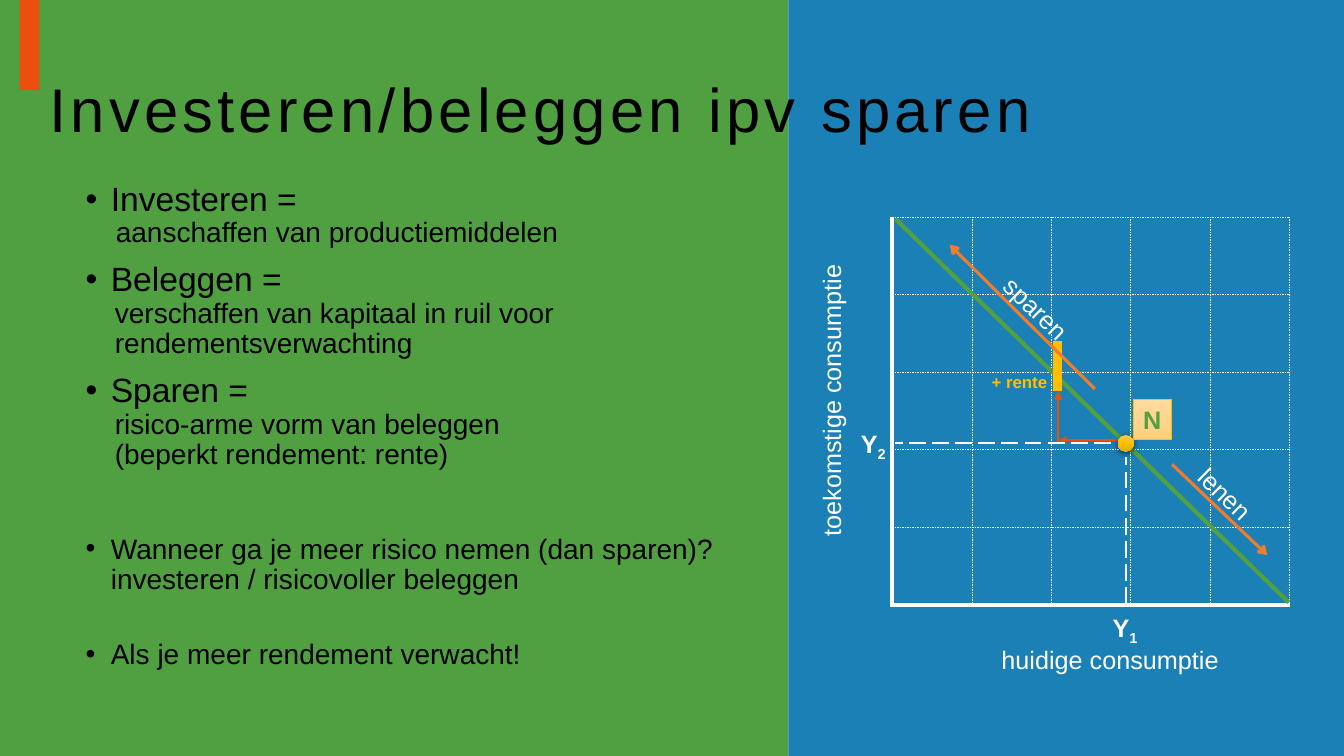
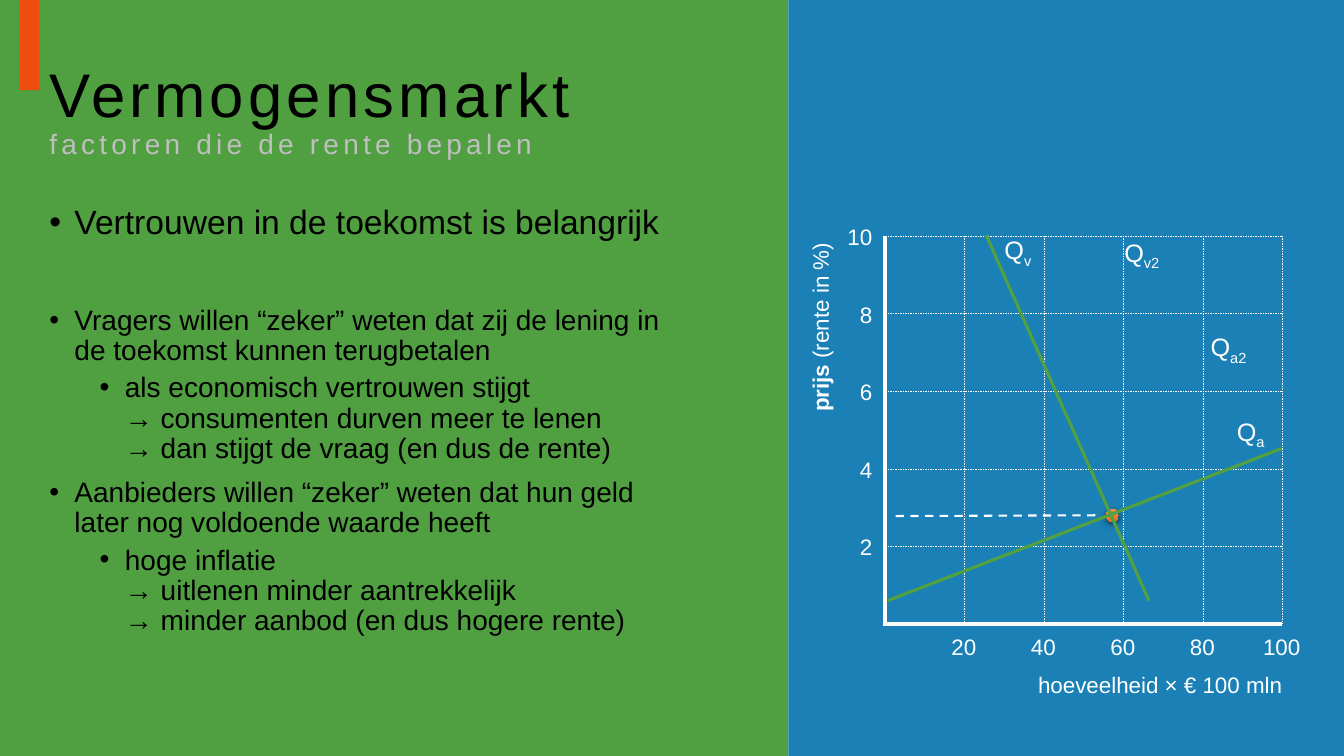
from dataclasses import dataclass
from typing import NamedTuple

from pptx import Presentation
from pptx.dml.color import RGBColor as RGB
from pptx.enum.dml import MSO_LINE as DASH
from pptx.enum.shapes import MSO_CONNECTOR as CONN, MSO_SHAPE as SHAPE
from pptx.enum.text import MSO_ANCHOR as ANCHOR, MSO_AUTO_SIZE as FIT, PP_ALIGN as ALIGN
from pptx.oxml import parse_xml
from pptx.oxml.ns import nsdecls, qn
from pptx.oxml.xmlchemy import OxmlElement
from pptx.util import Inches, Pt

W, H = 13.33, 7.5
COL, ROW, CELLS = 3.94 / 5, 0.77, 5  # one cell of a plot, in inches
COLOURS = {
    "leaf": "258812", "blue": "1A80B6", "red": "ED4D0F", "black": "000000",
    "grey": "BFBFBF", "white": "FFFFFF", "green": "51A041",
    "gold": "FFC000", "orange": "ED7D31",
}
GOLD_FADE = ("FFC64B", "FFC000", "E3AB00")
PALE_FADE = ("FFDB9E", "FFD590", "FFD07C")
ORANGE_FADE = ("F18C57", "F67B28", "E56C19")


class Area(NamedTuple):
    """A rectangle in percent of the slide's size."""
    left: float
    top: float
    width: float
    height: float

    def inches(self) -> list:
        return [Inches(v * side / 100) for v, side in zip(self, (W, H, W, H))]


class Run(NamedTuple):
    text: str
    bold: bool = False
    sub: bool = False


class Item(NamedTuple):
    """A body paragraph; indent is in inches, before in points."""
    text: str
    size: int = 20
    before: float = 10
    indent: float = 0.25
    bullet: bool = True


# Positions of marks are columns and rows from a plot's top left corner.
@dataclass
class Line:
    col1: float
    row1: float
    col2: float
    row2: float
    colour: str = "white"
    width: float = 1.5
    dash: DASH | None = None
    tail: str = ""


@dataclass
class Label:
    runs: tuple[Run, ...]
    col: float
    row: float
    cols: float
    size: int = 18
    colour: str = "white"
    turn: float = 0


@dataclass
class Marker:
    shape: SHAPE
    col: float
    row: float
    cols: float
    rows: float
    fade: tuple[str, str, str]
    outline: str = ""
    text: str = ""


@dataclass
class Plot:
    left: float
    top: float
    marks: list

    def x(self, col: float) -> int:
        return Inches(self.left + col * COL)

    def y(self, row: float) -> int:
        return Inches(self.top + row * ROW)


def rgb(name: str) -> RGB:
    return RGB.from_string(COLOURS[name])


def add_run(p, text: str, size: float, colour: str, bold: bool = False, **attrs: str) -> None:
    r = p.add_run()
    r.text = text
    set_format(r.font, {"name": "Arial", "size": Pt(size), "bold": bold})
    r.font.color.rgb = rgb(colour)
    for name, value in attrs.items():
        r.font._element.set(name, value)


def set_format(target, formats: dict) -> None:
    for name, value in formats.items():
        setattr(target, name, value)


def draw_bands(s, layout) -> None:
    """Draw the coloured bands and hand them to the layout, behind its title."""
    bands = (("leaf", Area(0, 0, 58.66, 100)), ("blue", Area(58.66, 0, 41.34, 100)),
             ("red", Area(1.46, 0, 1.46, 11.93)))
    for i, (colour, area) in enumerate(bands):
        band = s.shapes.add_shape(SHAPE.RECTANGLE, *area.inches())
        band.shadow.inherit = False
        band.fill.solid()
        band.fill.fore_color.rgb = rgb(colour)
        band.line.fill.background()
        if colour == "leaf":
            alpha = OxmlElement("a:alpha")
            alpha.set("val", "80000")
            band.element.spPr.find(".//" + qn("a:srgbClr")).append(alpha)
        layout.shapes.element.insert(2 + i, band.element)


def set_title(s, title: str, subtitle: str) -> None:
    ph = s.shapes.title
    set_format(ph, dict(zip(("left", "top", "width", "height"),
                            Area(2.93, 5.2, 94.6, 19.33).inches())))
    tf = ph.text_frame
    set_format(tf, {"vertical_anchor": ANCHOR.MIDDLE, "auto_size": FIT.NONE, "word_wrap": True})
    p = tf.paragraphs[0]
    set_format(p, {"alignment": ALIGN.LEFT, "line_spacing": 0.9})
    add_run(p, title, 44, "black", spc="300")
    if subtitle:
        p.add_line_break()
        add_run(p, subtitle, 20, "grey", spc="300")


def add_body(s, area: Area, items: list[Item]) -> None:
    tf = s.shapes.add_textbox(*area.inches()).text_frame
    tf.word_wrap = True
    for i, item in enumerate(items):
        p = tf.add_paragraph() if i else tf.paragraphs[0]
        set_format(p, {"line_spacing": 0.9, "space_before": Pt(item.before if i else 0)})
        pPr = p._p.get_or_add_pPr()
        pPr.set("marL", str(Inches(item.indent)))
        pPr.set("indent", str(Inches(-0.25 if item.bullet else 0)))
        if item.bullet:
            pPr.append(parse_xml(f'<a:buFont {nsdecls("a")} typeface="Arial"/>'))
            pPr.append(parse_xml(f'<a:buChar {nsdecls("a")} char="•"/>'))
        for n, line in enumerate(item.text.split("\n")):
            if n:
                p.add_line_break()
            add_run(p, line, item.size, "black")


def draw_line(s, plot: Plot, mark: Line) -> None:
    line = s.shapes.add_connector(CONN.STRAIGHT, plot.x(mark.col1), plot.y(mark.row1),
                                  plot.x(mark.col2), plot.y(mark.row2))
    line.line.color.rgb = rgb(mark.colour)
    line.line.width = Pt(mark.width)
    if mark.dash:
        line.line.dash_style = mark.dash
    if mark.tail:
        tail = OxmlElement("a:tailEnd")
        tail.set("type", mark.tail)
        line.line._get_or_add_ln().append(tail)
    line.element.spPr.append(OxmlElement("a:effectLst"))


def draw_label(s, plot: Plot, mark: Label) -> None:
    """Centre a one-line text on its grid position."""
    width, height = Inches(mark.cols * COL), Pt(mark.size * 1.2 + 7.2)
    box = s.shapes.add_textbox(plot.x(mark.col) - width // 2,
                               plot.y(mark.row) - height // 2, width, height)
    box.rotation = mark.turn
    tf = box.text_frame
    set_format(tf, {"word_wrap": False, "auto_size": FIT.SHAPE_TO_FIT_TEXT})
    p = tf.paragraphs[0]
    p.alignment = ALIGN.CENTER
    for run in mark.runs:
        attrs = {"baseline": "-25000"} if run.sub else {}
        add_run(p, run.text, mark.size, mark.colour, run.bold, **attrs)


def draw_marker(s, plot: Plot, mark: Marker) -> None:
    """Draw a shape with a vertical fade: outlined, or else with a soft shadow."""
    shape = s.shapes.add_shape(mark.shape, plot.x(mark.col - mark.cols / 2),
                               plot.y(mark.row - mark.rows / 2),
                               Inches(mark.cols * COL), Inches(mark.rows * ROW))
    shape.shadow.inherit = False
    spPr = shape.element.spPr
    stops = "".join(f'<a:gs pos="{i * 50000}"><a:srgbClr val="{c}"/></a:gs>'
                    for i, c in enumerate(mark.fade))
    spPr.insert(2, parse_xml(f'<a:gradFill {nsdecls("a")}><a:gsLst>{stops}</a:gsLst>'
                             '<a:lin ang="5400000" scaled="0"/></a:gradFill>'))
    if mark.outline:
        shape.line.color.rgb = rgb(mark.outline)
        shape.line.width = Pt(0.5)
    else:
        shape.line.fill.background()
        spPr.find(qn("a:effectLst")).append(parse_xml(
            f'<a:outerShdw {nsdecls("a")} blurRad="57150" dist="19050" dir="5400000">'
            '<a:srgbClr val="000000"><a:alpha val="63000"/></a:srgbClr></a:outerShdw>'))
    if mark.text:
        shape.text_frame.word_wrap = False
        p = shape.text_frame.paragraphs[0]
        p.alignment = ALIGN.CENTER
        add_run(p, mark.text, 18, "green", True)


def draw_plot(s, plot: Plot) -> None:
    draw = {Line: draw_line, Label: draw_label, Marker: draw_marker}
    grid = [Line(0, n, CELLS, n, width=0.25, dash=DASH.DASH) for n in range(CELLS)]
    grid += [Line(n, 0, n, CELLS, width=0.25, dash=DASH.DASH) for n in range(1, CELLS + 1)]
    axes = [Line(0, 0, 0, CELLS, width=3), Line(CELLS, CELLS, -0.03, CELLS, width=3)]
    for mark in grid + axes + plot.marks:
        draw[type(mark)](s, plot, mark)


def with_sub(text: str, sub: str, col: float, row: float, bold: bool = False) -> Label:
    """Label with a subscript, in a box that widens with the subscript's length."""
    return Label((Run(text, bold), Run(sub, bold, True)), col, row, 0.5 + 0.2 * len(sub))


SAVING = Plot(8.85, 2.15, [
    Line(2.84, 2.88, 2.09, 2.88, "red", tail="triangle"),
    Line(2.09, 2.91, 2.09, 2.25, "red", tail="triangle"),
    Label((Run("+ rente", True),), 1.6, 2.13, 0.96, 12, "gold"),
    Line(0.04, 0.03, 4.99, 4.97, "green", 3),
    Line(2.75, 2.92, 0.04, 2.92, dash=DASH.LONG_DASH),
    Line(2.94, 4.99, 2.94, 3.1, dash=DASH.LONG_DASH),
    Marker(SHAPE.OVAL, 2.94, 2.92, 0.2, 0.21, GOLD_FADE),
    with_sub("Y", "2", -0.24, 2.92, True),
    with_sub("Y", "1", 2.93, 5.29, True),
    Marker(SHAPE.RECTANGLE, 3.27, 2.61, 0.48, 0.52, PALE_FADE, "gold", "N"),
    Line(3.52, 3.19, 4.72, 4.36, "orange", 2.25, tail="arrow"),
    Label((Run("sparen"),), 1.81, 1.18, 1.23, turn=44.1),
    Label((Run("lenen"),), 4.19, 3.57, 1.04, turn=44.1),
    Label((Run("huidige consumptie"),), 2.74, 5.7, 3.02),
    Label((Run("toekomstige consumptie"),), -0.77, 2.37, 3.71, turn=270),
    Line(2.08, 1.6, 2.08, 2.25, "gold", 6),
    Line(2.55, 2.22, 0.72, 0.36, "orange", 2.25, tail="arrow"),
])
PRICE_TICKS = [Label((Run(str(v)),), -0.32 if v == 10 else -0.24, CELLS - v / 2 + 0.01,
                     0.62 if v == 10 else 0.47, 16) for v in range(2, 11, 2)]
QUANTITY_TICKS = [Label((Run(str(v)),), v / 20 - 0.01, 5.29, 0.79 if v == 100 else 0.62, 16)
                  for v in range(20, 101, 20)]
MARKET = Plot(8.78, 2.34, [
    Label((Run("hoeveelheid × € 100 mln"),), 3.46, 5.78, 3.4, 16),
    Label((Run("prijs", True), Run(" (rente in %)")), -0.82, 1.18, 2.46, 16, turn=270),
    *PRICE_TICKS, *QUANTITY_TICKS,
    Line(0.13, 3.61, 2.72, 3.6, dash=DASH.DASH),
    Marker(SHAPE.OVAL, 2.86, 3.6, 0.16, 0.17, ORANGE_FADE),
    Line(1.27, -0.01, 3.32, 4.7, "green", 2.25),
    Line(0.03, 4.7, 4.99, 2.74, "green", 2.25),
    with_sub("Q", "v", 1.67, 0.18), with_sub("Q", "a", 4.6, 2.52),
    with_sub("Q", "v2", 3.23, 0.21), with_sub("Q", "a2", 4.32, 1.43),
])
SAVING_ITEMS = [
    Item("Investeren =", 24),
    Item("aanschaffen van productiemiddelen", 20, 0, 0.3, False),
    Item("Beleggen =", 24),
    Item("verschaffen van kapitaal in ruil voor rendementsverwachting", 20, 0, 0.29, False),
    Item("Sparen =", 24),
    Item("risico-arme vorm van beleggen\n(beperkt rendement: rente)", 20, 0, 0.29, False),
    Item("Wanneer ga je meer risico nemen (dan sparen)? investeren / risicovoller beleggen",
         before=46),
    Item("Als je meer rendement verwacht!", before=32),
]
MARKET_ITEMS = [
    Item("Vertrouwen in de toekomst is belangrijk", 24),
    Item("Vragers willen “zeker” weten dat zij de lening in de toekomst kunnen terugbetalen",
         before=46),
    Item("als economisch vertrouwen stijgt\n→ consumenten durven meer te lenen\n"
         "→ dan stijgt de vraag (en dus de rente)", 20, 5, 0.75),
    Item("Aanbieders willen “zeker” weten dat hun geld later nog voldoende waarde heeft"),
    Item("hoge inflatie\n→ uitlenen minder aantrekkelijk\n"
         "→ minder aanbod (en dus hogere rente)", 20, 5, 0.75),
]
SLIDES = [
    ("Investeren/beleggen ipv sparen", "", Area(5.63, 23.47, 49.29, 68.53), SAVING_ITEMS, SAVING),
    ("Vermogensmarkt", "factoren die de rente bepalen", Area(2.93, 26.53, 47.19, 63.47),
     MARKET_ITEMS, MARKET),
]


def main() -> None:
    prs = Presentation()
    prs.slide_width, prs.slide_height = Inches(W), Inches(H)
    layout = prs.slide_layouts[5]
    for i, (title, subtitle, area, items, plot) in enumerate(SLIDES):
        s = prs.slides.add_slide(layout)
        if i == 0:
            draw_bands(s, layout)
        set_title(s, title, subtitle)
        add_body(s, area, items)
        draw_plot(s, plot)
    prs.save("out.pptx")


if __name__ == "__main__":
    main()
